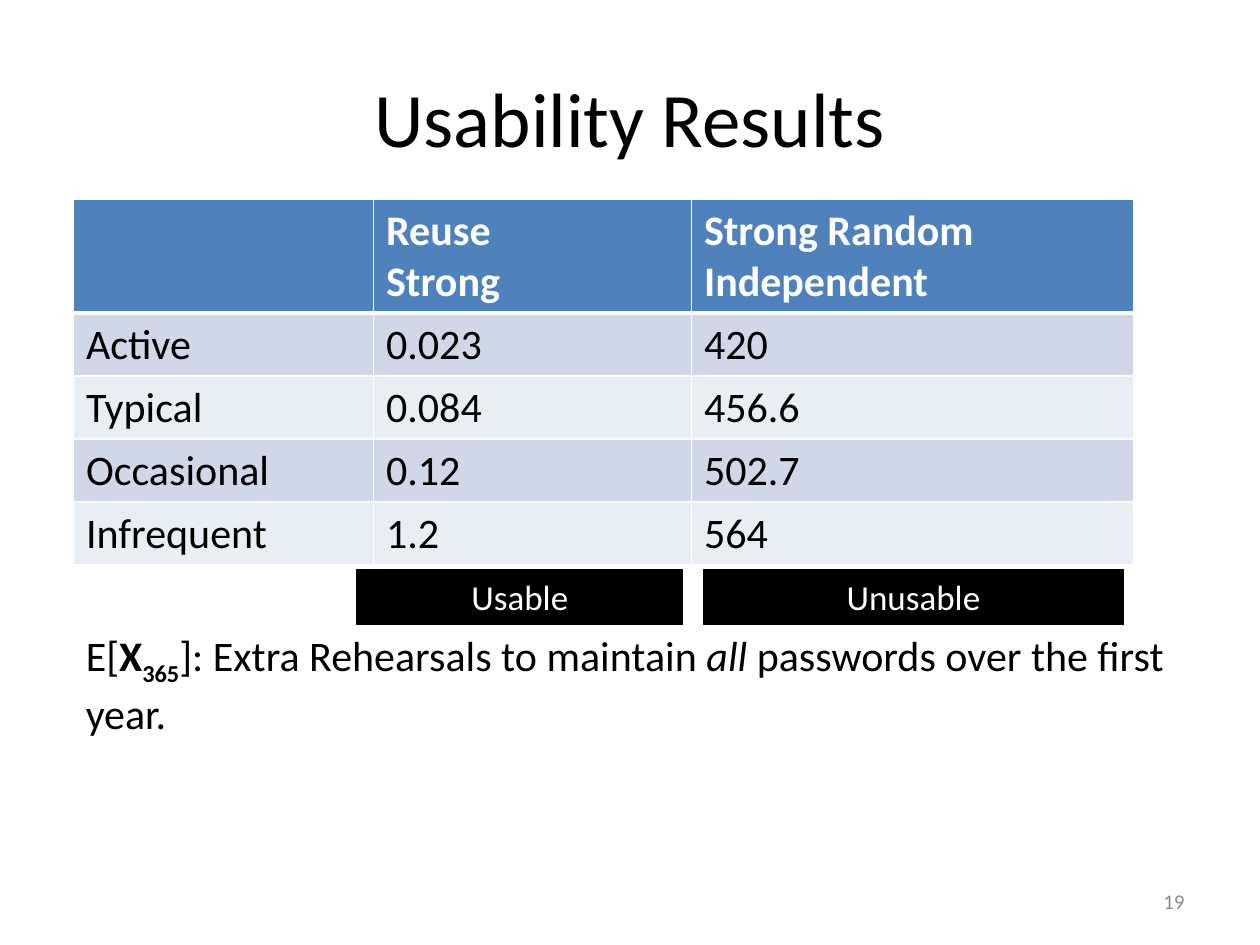
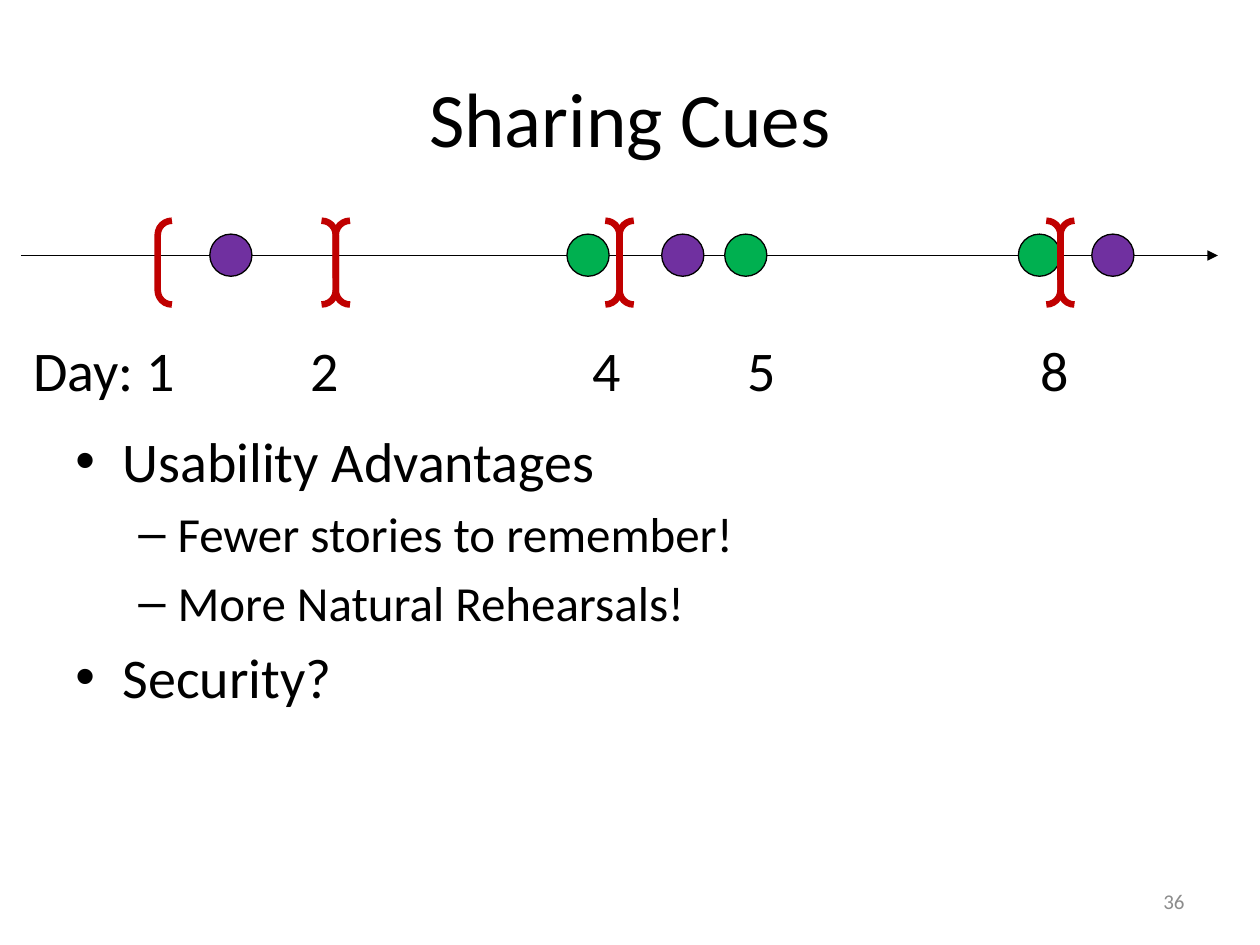
"""Build two slides: a table of usability results and a timeline of shared cues."""
from lxml import etree
from pptx import Presentation
from pptx import util as u
from pptx.dml import color
from pptx.enum import shapes, text
from pptx.oxml import ns

BLACK, WHITE, GREY = "000000", "FFFFFF", "8C8C8C"
HEADER_BLUE, BAND_DARK, BAND_LIGHT = "4F81BD", "D0D8E8", "E9EDF4"
GREEN, PURPLE, RED = "00B050", "7030A0", "C00000"
ALIGN = text.PP_ALIGN
ANCHOR = text.MSO_ANCHOR


def rgb(value):
    return color.RGBColor.from_string(value)


def write(frame, words, size, ink=BLACK, align=ALIGN.LEFT, anchor=ANCHOR.TOP, bold=False):
    frame.word_wrap = True
    frame.vertical_anchor = anchor
    frame.text = words
    for paragraph in frame.paragraphs:
        paragraph.alignment = align
        paragraph.font.name = "Calibri"
        paragraph.font.size = u.Pt(size)
        paragraph.font.bold = bold
        paragraph.font.color.rgb = rgb(ink)


presentation = Presentation()
presentation.slide_width, presentation.slide_height = u.Cm(25.4), u.Cm(19.05)

for title, number in (("Usability Results", "19"), ("Sharing Cues", "36")):
    slide = presentation.slides.add_slide(presentation.slide_layouts[6])
    title_box = slide.shapes.add_textbox(u.Cm(1.27), u.Cm(0.76), u.Cm(22.86), u.Cm(3.18))
    write(title_box.text_frame, title, 44, align=ALIGN.CENTER, anchor=ANCHOR.MIDDLE)
    number_box = slide.shapes.add_textbox(u.Cm(18.2), u.Cm(17.65), u.Cm(5.93), u.Cm(1.02))
    write(number_box.text_frame, number, 12, GREY, ALIGN.RIGHT, ANCHOR.MIDDLE)
results_slide, cues_slide = presentation.slides

results = (
    ("", "Reuse\nStrong", "Strong Random Independent"),
    ("Active", "0.023", "420"),
    ("Typical", "0.084", "456.6"),
    ("Occasional", "0.12", "502.7"),
    ("Infrequent", "1.2", "564"),
)
table = results_slide.shapes.add_table(
    5, 3, u.Cm(1.48), u.Cm(4.02), u.Cm(21.38), u.Cm(7.37)).table
table.first_row = table.horz_banding = False
for column, width in zip(table.columns, (6.05, 6.41, 8.92)):
    column.width = u.Cm(width)
for row_index, values in enumerate(results):
    is_header = row_index == 0
    table.rows[row_index].height = u.Cm(2.09 if is_header else 1.17)
    band = HEADER_BLUE if is_header else (BAND_LIGHT, BAND_DARK)[row_index % 2]
    for column_index, value in enumerate(values):
        cell = table.cell(row_index, column_index)
        write(cell.text_frame, value, 24, WHITE if is_header else BLACK, bold=is_header)
        properties = cell._tc.get_or_add_tcPr()
        for side in "LRTB":
            thick = (is_header and side == "B") or (row_index == 1 and side == "T")
            border = etree.SubElement(properties, ns.qn("a:ln" + side), w=str(u.Pt(3 if thick else 1)))
            border_fill = etree.SubElement(border, ns.qn("a:solidFill"))
            etree.SubElement(border_fill, ns.qn("a:srgbClr"), val=WHITE)
        cell.fill.solid()
        cell.fill.fore_color.rgb = rgb(band)

explanation = results_slide.shapes.add_textbox(u.Cm(1.48), u.Cm(12.57), u.Cm(23.28), u.Cm(2.31))
write(explanation.text_frame, "", 24)
paragraph = explanation.text_frame.paragraphs[0]
for words, bold, italic, baseline in (
    ("E[", False, False, 0),
    ("X", True, False, 0),
    ("365", True, False, -25000),
    ("]: Extra Rehearsals to maintain ", False, False, 0),
    ("all", False, True, 0),
    (" passwords over the first year.", False, False, 0),
):
    run = paragraph.add_run()
    run.text = words
    run.font.bold, run.font.italic = bold, italic
    if baseline:
        run._r.get_or_add_rPr().set("baseline", str(baseline))

for verdict, left, width in (("Usable", 7.2, 6.56), ("Unusable", 14.18, 8.47)):
    label = results_slide.shapes.add_shape(
        shapes.MSO_SHAPE.RECTANGLE, u.Cm(left), u.Cm(11.48), u.Cm(width), u.Cm(1.11))
    label.shadow.inherit = False
    label.fill.solid()
    label.fill.fore_color.rgb = label.line.color.rgb = rgb(BLACK)
    label.line.width = u.Pt(0.75)
    write(label.text_frame, verdict, 20, WHITE, ALIGN.CENTER)

bullet_box = cues_slide.shapes.add_textbox(u.Cm(1.27), u.Cm(8.47), u.Cm(22.86), u.Cm(8.55))
bullets = (
    ("Usability Advantages", 0),
    ("Fewer stories to remember!", 1),
    ("More Natural Rehearsals!", 1),
    ("Security?", 0),
)
bullet_levels = ((32, "•", 0.95, -0.95), (28, "–", 2.06, -0.79))
write(bullet_box.text_frame, "\n".join(words for words, level in bullets), 32)
for paragraph, (words, level) in zip(bullet_box.text_frame.paragraphs, bullets):
    size, mark, margin, indent = bullet_levels[level]
    paragraph.level = level
    paragraph.font.size = u.Pt(size)
    paragraph.space_before = u.Pt(size * 0.2)
    properties = paragraph._p.get_or_add_pPr()
    properties.set("marL", str(u.Cm(margin)))
    properties.set("indent", str(u.Cm(indent)))
    bullet_font = etree.Element(ns.qn("a:buFont"), typeface="Arial")
    bullet_mark = etree.Element(ns.qn("a:buChar"), char=mark)
    properties.find(ns.qn("a:spcBef")).addnext(bullet_font)
    bullet_font.addnext(bullet_mark)

timeline = cues_slide.shapes.add_connector(
    shapes.MSO_CONNECTOR.STRAIGHT, u.Cm(0.42), u.Cm(5.15), u.Cm(24.55), u.Cm(5.15))
timeline.line.color.rgb = rgb(BLACK)
timeline.line.width = u.Pt(0.75)
etree.SubElement(timeline.line._get_or_add_ln(), ns.qn("a:tailEnd"), type="triangle")
etree.SubElement(timeline._element.spPr, ns.qn("a:effectLst"))

day_box = cues_slide.shapes.add_textbox(u.Cm(0.42), u.Cm(6.63), u.Cm(24.13), u.Cm(1.63))
write(day_box.text_frame, "Day: 1\t2\t4\t5\t8", 32)
properties = day_box.text_frame.paragraphs[0]._p.get_or_add_pPr()
tab_list = etree.Element(ns.qn("a:tabLst"))
properties.find(ns.qn("a:defRPr")).addprevious(tab_list)
for position in (5.6, 11.28, 14.4, 20.3):
    etree.SubElement(tab_list, ns.qn("a:tab"), pos=str(u.Cm(position)), algn="l")

for ink, lefts in ((GREEN, (11.43, 20.53, 14.61)), (PURPLE, (4.23, 13.34, 22.01))):
    for left in lefts:
        rehearsal = cues_slide.shapes.add_shape(
            shapes.MSO_SHAPE.OVAL, u.Cm(left), u.Cm(4.72), u.Cm(0.85), u.Cm(0.85))
        rehearsal.shadow.inherit = False
        rehearsal.fill.solid()
        rehearsal.fill.fore_color.rgb = rgb(ink)
        rehearsal.line.color.rgb = rgb(BLACK)
        rehearsal.line.width = u.Pt(0.75)

PAIR, OPENING = shapes.MSO_SHAPE.DOUBLE_BRACKET, shapes.MSO_SHAPE.LEFT_BRACKET
for kind, left, right in (
    (PAIR, 3.18, 6.77), (PAIR, 6.77, 12.49), (PAIR, 12.49, 21.38), (OPENING, 21.38, 21.66),
):
    interval = cues_slide.shapes.add_shape(
        kind, u.Cm(left), u.Cm(4.45), u.Cm(right - left), u.Cm(1.69))
    interval.adjustments[0] = 1 if kind == OPENING else 0.17
    interval.shadow.inherit = False
    interval.fill.background()
    interval.line.color.rgb = rgb(RED)
    interval.line.width = u.Pt(3.75)

presentation.save("out.pptx")
